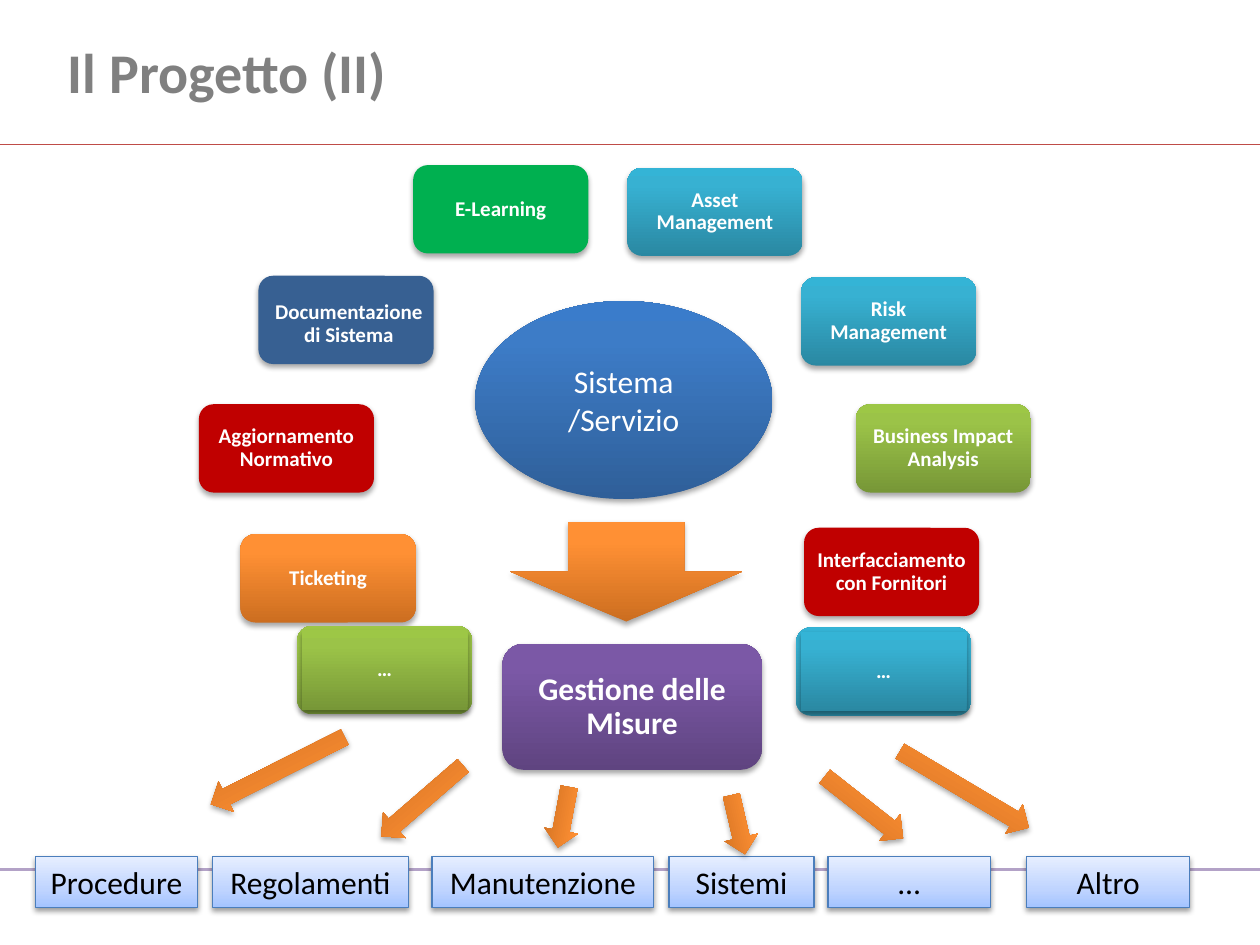
from lxml.etree import SubElement
from copy import deepcopy
from pptx import Presentation
from pptx.dml.color import RGBColor
from pptx.enum.shapes import MSO_CONNECTOR, MSO_SHAPE as SHAPE
from pptx.enum.text import MSO_ANCHOR as ANCHOR, PP_ALIGN as ALIGN
from pptx.oxml.ns import qn
from pptx.util import Cm, Pt

FONT = "Calibri"
COLORS = {
    "white": "FFFFFF", "black": "000000", "title": "808080",
    "top_rule": "BF4C48", "bottom_rule": "B3A2C7", "border": "4B7EBC",
    "red": "C00000", "emerald": "00B050", "navy": "376092",
}
# Gradients run from bottom to top: (position, colour)
GRADIENTS = {
    "olive": [(0, "779737"), (0.8, "9BC348"), (1, "9DC746")],
    "purple": [(0, "5F4480"), (0.8, "7B58A6"), (1, "7C57A8")],
    "aqua": [(0, "2A88A2"), (0.8, "37B1D2"), (1, "34B4D6")],
    "orange": [(0, "CC6E20"), (0.8, "FF9034"), (1, "FF9136")],
    "blue": [(0, "2F5F99"), (0.8, "3D7CC7"), (1, "3A7CCB")],
    "pale": [(0, "A4C4FF"), (0.35, "BFD4FF"), (1, "E6EEFF")],
}

# Content, lengths in cm
TITLE = "Il Progetto (II)"
RULES = [(2.92, "top_rule", 0.75), (17.53, "bottom_rule", 1.75)]  # y, colour, width
CARD_W, CARD_H, CARD_PAD, INSET = 3.53, 1.78, 0.09, 0.13
CARDS = [  # text, left, top, fill
    ("Business Impact Analysis", 17.25, 8.15, "olive"),
    ("Asset Management", 12.65, 3.38, "aqua"),
    ("Ticketing", 4.85, 10.77, "orange"),
    ("Aggiornamento Normativo", 4.01, 8.15, "red"),
    ("E-Learning", 8.33, 3.33, "emerald"),
    ("Documentazione di Sistema", 5.21, 5.56, "navy"),
    ("Risk Management", 16.15, 5.59, "aqua"),
    ("Interfacciamento con Fornitori", 16.21, 10.64, "red"),
]
MORE_CARDS = [("…", 5.99, 12.62, "olive"), ("…", 16.05, 12.65, "aqua")]
NUDGES = {"Documentazione di Sistema": (0.06, 0.09)}  # text shift right, down
BOX_TOP, BOX_H = 17.27, 1.02
BOXES = [  # text, left, width
    ("Procedure", 0.71, 3.28), ("Regolamenti", 4.29, 3.94),
    ("Manutenzione", 8.71, 4.47), ("Sistemi", 13.49, 2.92),
    ("…", 16.69, 3.28), ("Altro", 20.7, 3.28),
]
ARROW_H = 0.69
ARROWS = [  # left, top, length, rotation
    (4.09, 15.19, 3.02, 153.3), (7.42, 15.8, 2.18, 139.1),
    (10.74, 16.13, 1.24, 100.5), (14.27, 16.28, 1.22, 77),
    (16.41, 15.93, 2.01, 38.2), (17.93, 15.57, 3.02, 30.7),
]


def rgb(name):
    return RGBColor.from_string(COLORS[name])


def add_shadow(sp, opacity, distance):
    sp.shadow.inherit = False
    effects = sp._element.spPr.find(qn("a:effectLst"))
    outer = SubElement(effects, qn("a:outerShdw"), blurRad=str(Pt(3.15)),
                       dist=str(Pt(distance)), dir="5400000", rotWithShape="0")
    color = SubElement(outer, qn("a:srgbClr"), val=COLORS["black"])
    SubElement(color, qn("a:alpha"), val=str(opacity * 1000))


def add_shape(kind, left, top, width, height, fill, border=None):
    sp = slide.shapes.add_shape(kind, Cm(left), Cm(top), Cm(width), Cm(height))
    if fill in GRADIENTS:
        sp.fill.gradient()
        sp.fill.gradient_angle = 90
        stop_list = sp._element.spPr.find(qn("a:gradFill")).find(qn("a:gsLst"))
        stop_list.append(deepcopy(stop_list[0]))
        for stop, (position, color) in zip(sp.fill.gradient_stops, GRADIENTS[fill]):
            stop.position = position
            stop.color.rgb = RGBColor.from_string(color)
    else:
        sp.fill.solid()
        sp.fill.fore_color.rgb = rgb(fill)
    if border:
        sp.line.color.rgb = rgb(border)
        sp.line.width = Pt(0.75)
        add_shadow(sp, 38, 1.57)
    else:
        sp.line.fill.background()
        add_shadow(sp, 35, 1.81)
    return sp


def set_text(sp, text, size, color="white", bold=False, align=ALIGN.CENTER, anchor=ANCHOR.MIDDLE):
    tf = sp.text_frame
    tf.word_wrap = True
    tf.vertical_anchor = anchor
    tf.text = text
    p = tf.paragraphs[0]
    p.alignment = align
    font = p.runs[0].font
    font.name, font.size, font.bold = FONT, Pt(size), bold
    font.color.rgb = rgb(color)
    return tf


def set_card_text(sp, text, size):
    tf = set_text(sp, text, size, bold=True)
    dx, dy = NUDGES.get(text, (0, 0))
    tf.margin_left, tf.margin_right = Cm(INSET + dx), Cm(INSET - dx)
    tf.margin_top, tf.margin_bottom = Cm(INSET + dy), Cm(INSET - dy)
    tf.paragraphs[0].line_spacing = 0.9


prs = Presentation()
prs.slide_width, prs.slide_height = Cm(25.4), Cm(19.05)
slide = prs.slides.add_slide(prs.slide_layouts[5])

# Title and horizontal rules
title = slide.shapes.title
title.left, title.top, title.width, title.height = Cm(0.1), Cm(0.33), Cm(14.45), Cm(2.21)
tf = set_text(title, TITLE, 32, "title", True, ALIGN.LEFT)
tf.margin_left = Cm(1.27)

for y, color, width in RULES:
    rule = slide.shapes.add_connector(MSO_CONNECTOR.STRAIGHT, 0, Cm(y), prs.slide_width, Cm(y))
    rule.line.color.rgb = rgb(color)
    rule.line.width = Pt(width)
    SubElement(rule._element.spPr, qn("a:effectLst"))

# Ring of cards
for text, left, top, fill in CARDS:
    card = add_shape(SHAPE.ROUNDED_RECTANGLE, left, top, CARD_W, CARD_H, fill)
    set_card_text(card, text, 12)

# System, down arrow and measures in the centre
system = add_shape(SHAPE.OVAL, 9.58, 6.07, 5.99, 3.99, "blue")
set_text(system, "Sistema /Servizio", 18)
add_shape(SHAPE.DOWN_ARROW, 10.29, 10.52, 4.67, 2.01, "orange")
measures = add_shape(SHAPE.ROUNDED_RECTANGLE, 10.13, 12.98, 5.23, 2.54, "purple")
set_card_text(measures, "Gestione delle Misure", 18)

# Bottom boxes and the arrows that lead to them
for text, left, width in BOXES:
    box = add_shape(SHAPE.RECTANGLE, left, BOX_TOP, width, BOX_H, "pale", "border")
    set_text(box, text, 18, "black", anchor=ANCHOR.TOP)

for left, top, length, rotation in ARROWS:
    arrow = add_shape(SHAPE.RIGHT_ARROW, left, top, length, ARROW_H, "orange")
    arrow.rotation = rotation

# Open-ended cards with a raised inner panel
for text, left, top, fill in MORE_CARDS:
    add_shape(SHAPE.ROUNDED_RECTANGLE, left, top, CARD_W, CARD_H, fill)
    panel = add_shape(SHAPE.RECTANGLE, left + CARD_PAD, top + CARD_PAD,
                      CARD_W - 2 * CARD_PAD, CARD_H - 2 * CARD_PAD, fill)
    set_card_text(panel, text, 12)

prs.save("out.pptx")
